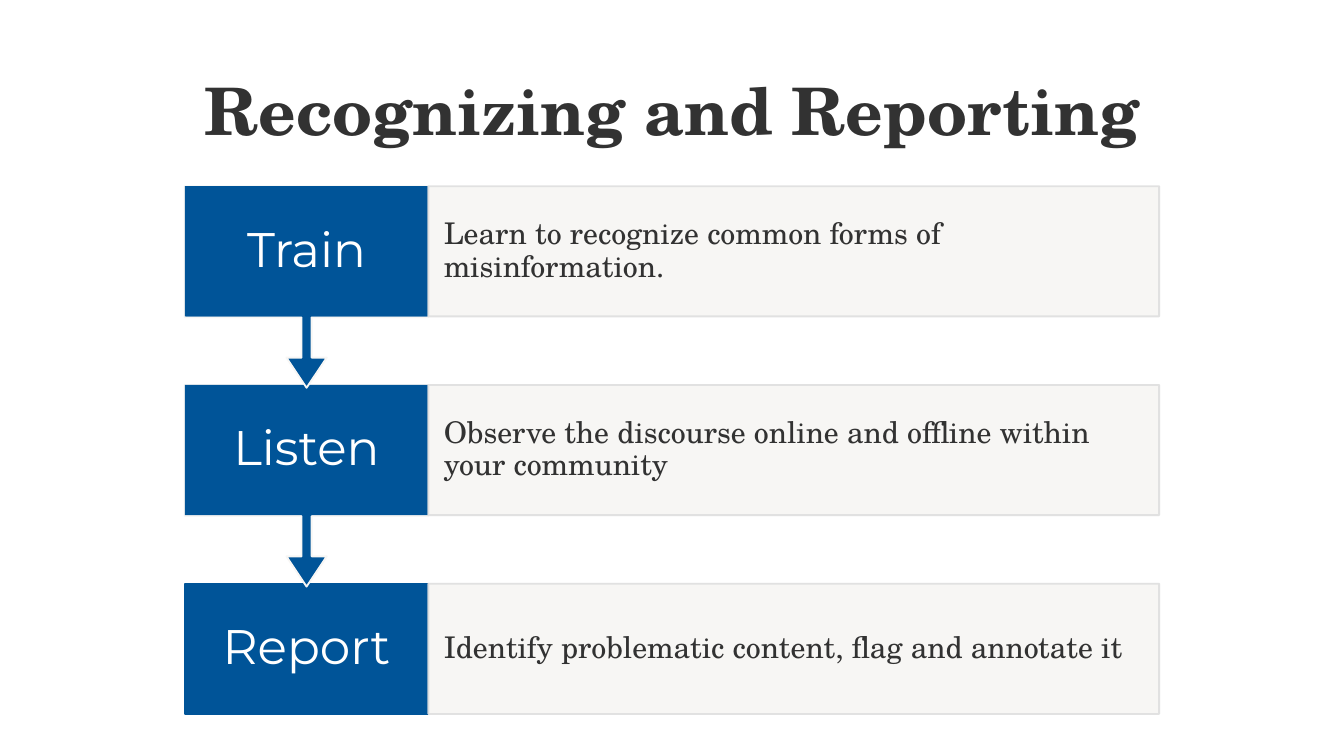
from dataclasses import dataclass

from lxml import etree
from pptx import Presentation
from pptx.dml.color import RGBColor
from pptx.enum import shapes, text
from pptx.oxml import ns
from pptx.util import Pt

PX = 9525
INK = RGBColor(0x32, 0x32, 0x32)
BLUE = RGBColor(0x00, 0x54, 0x98)
PALE = RGBColor(0xF7, 0xF6, 0xF4)
EDGE = RGBColor(0xDF, 0xDF, 0xDF)
WHITE = RGBColor(0xFF, 0xFF, 0xFF)
SERIF = "TeX Gyre Schola"
SANS = "Montserrat"
LEFT, TOP, STEP = 132, 133, 142
WIDE, HIGH, DROP = 174, 93, 144
SIDE, SPAN = LEFT + WIDE, 522


@dataclass
class Stage:
    name: str
    note: str


@dataclass
class Style:
    font: str
    size: float
    color: RGBColor
    align: text.PP_ALIGN
    inset: tuple[int, int]
    bold: bool = False


HEAD = Style(SERIF, 35.1, INK, text.PP_ALIGN.CENTER, (10, 5), True)
LABEL = Style(SANS, 26, WHITE, text.PP_ALIGN.CENTER, (12, 23))
NOTE = Style(SERIF, 16, INK, text.PP_ALIGN.LEFT, (11, 21))

STAGES = [
    Stage("Train", "Learn to recognize common forms of misinformation."),
    Stage("Listen", "Observe the discourse online and offline within your community"),
    Stage("Report", "Identify problematic content, flag and annotate it"),
]


def write(shape, words: str, style: Style) -> None:
    frame = shape.text_frame
    frame.text = words
    frame.word_wrap = True
    frame.auto_size = text.MSO_AUTO_SIZE.NONE
    frame.vertical_anchor = text.MSO_ANCHOR.MIDDLE
    across, down = style.inset
    frame.margin_left = frame.margin_right = across * PX
    frame.margin_top = frame.margin_bottom = down * PX
    para = frame.paragraphs[0]
    para.alignment = style.align
    para.line_spacing = 0.9
    font = para.runs[0].font
    font.name = style.font
    font.size = Pt(style.size)
    font.bold = style.bold
    font.color.rgb = style.color


def block(slide, kind, box: tuple[int, int, int, int], fill: RGBColor,
          line: RGBColor | None = None):
    shape = slide.shapes.add_shape(kind, *(n * PX for n in box))
    shape.shadow.inherit = False
    shape.fill.solid()
    shape.fill.fore_color.rgb = fill
    if line is None:
        shape.line.fill.background()
    else:
        shape.line.color.rgb = line
        shape.line.width = Pt(1)
    return shape


def fade(shape, share: int) -> None:
    color = shape.line._ln.find(".//" + ns.qn("a:srgbClr"))
    etree.SubElement(color, ns.qn("a:alpha"), val=str(share * 1000))


def draw(slide, stage: Stage, top: int, last: bool) -> None:
    rect = shapes.MSO_SHAPE.RECTANGLE
    card = (LEFT, top, WIDE, HIGH)
    if last:
        block(slide, rect, card, BLUE, BLUE)
    else:
        arrow = block(slide, shapes.MSO_SHAPE.UP_ARROW_CALLOUT,
                      (LEFT, top, WIDE, DROP), BLUE, PALE)
        arrow.rotation = 180
        for i, part in enumerate((0.05, 0.1, 0.15, 0.65)):
            arrow.adjustments[i] = part
    write(block(slide, rect, card, BLUE), stage.name, LABEL)
    panel = block(slide, rect, (SIDE, top, SPAN, HIGH), PALE, EDGE)
    fade(panel, 89)
    write(panel, stage.note, NOTE)


def main() -> None:
    deck = Presentation()
    deck.slide_width, deck.slide_height = 960 * PX, 540 * PX
    slide = deck.slides.add_slide(deck.slide_layouts[5])
    title = slide.shapes.title
    title.left, title.top = LEFT * PX, 29 * PX
    title.width, title.height = (WIDE + SPAN) * PX, 105 * PX
    write(title, "Recognizing and Reporting", HEAD)
    final = len(STAGES) - 1
    for i, stage in reversed(list(enumerate(STAGES))):
        draw(slide, stage, TOP + i * STEP, i == final)
    deck.save("out.pptx")


if __name__ == "__main__":
    main()
